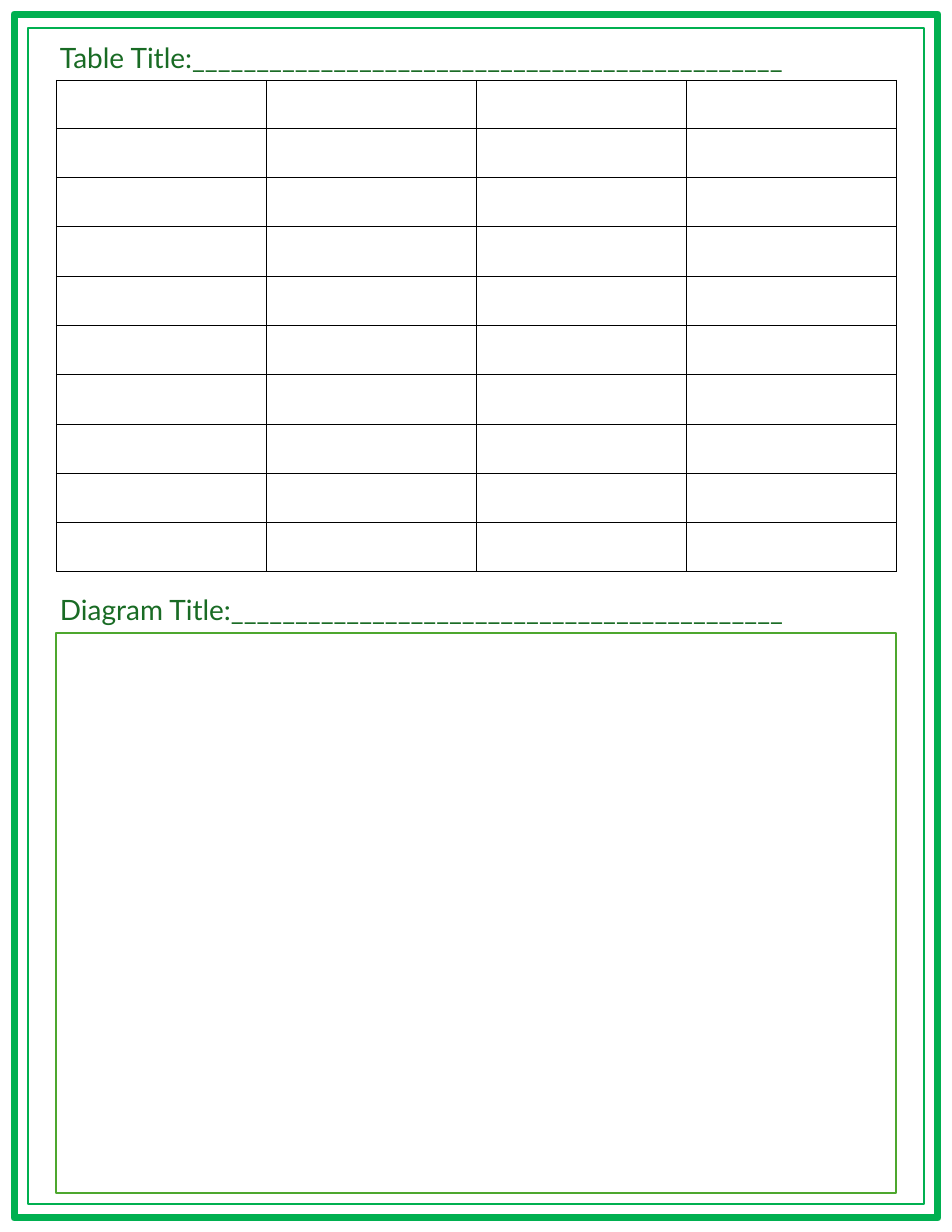
from lxml import etree
from pptx import Presentation
from pptx import util as u
from pptx.dml.color import RGBColor
from pptx.enum import shapes, text
from pptx.oxml.ns import qn

PX = u.Inches(1) / 112
COLORS = {
    "border": "00B050",
    "title": "196B24",
    "diagram": "4EA72E",
    "grid": "000000",
    "paper": "FFFFFF",
}


def px(length):
    return u.Emu(round(length * PX))


class Worksheet:
    font = "Lato"
    title_size = 18

    def __init__(self, slide):
        self.slide = slide

    def color(self, name):
        return RGBColor.from_string(COLORS[name])

    def frame(self, left, top, width, height, line, points, fill=None):
        shape = self.slide.shapes.add_shape(
            shapes.MSO_SHAPE.RECTANGLE, px(left), px(top), px(width), px(height))
        shape.shadow.inherit = False
        if fill:
            shape.fill.solid()
            shape.fill.fore_color.rgb = self.color(fill)
        else:
            shape.fill.background()
        shape.line.color.rgb = self.color(line)
        shape.line.width = u.Pt(points)

    def title(self, top, label, blanks):
        box = self.slide.shapes.add_textbox(px(49), px(top), px(854), px(45))
        box.text_frame.word_wrap = True
        box.text_frame.auto_size = text.MSO_AUTO_SIZE.SHAPE_TO_FIT_TEXT
        run = box.text_frame.paragraphs[0].add_run()
        run.text = label + "_" * blanks
        run.font.name = self.font
        run.font.size = u.Pt(self.title_size)
        run.font.color.rgb = self.color("title")

    def cell_borders(self, cell, points):
        properties = cell._tc.get_or_add_tcPr()
        for position, side in enumerate(("a:lnL", "a:lnR", "a:lnT", "a:lnB")):
            line = etree.Element(qn(side), w=str(u.Pt(points)))
            fill = etree.SubElement(line, qn("a:solidFill"))
            etree.SubElement(fill, qn("a:srgbClr"), val=COLORS["grid"])
            properties.insert(position, line)

    def table(self, left, top, width, header, body, body_rows, columns):
        table = self.slide.shapes.add_table(
            body_rows + 1, columns, px(left), px(top), px(width), px(header + body)).table
        table.first_row = False
        table.horz_banding = False
        for column in table.columns:
            column.width = px(width / columns)
        for index, row in enumerate(table.rows):
            row.height = px(body / body_rows if index else header)
        for cell in table.iter_cells():
            cell.fill.background()
            self.cell_borders(cell, 0.25)


def main():
    presentation = Presentation()
    presentation.slide_width = px(952)
    presentation.slide_height = px(1232)
    slide = presentation.slides.add_slide(presentation.slide_layouts[6])
    slide.background.fill.solid()
    slide.background.fill.fore_color.rgb = RGBColor.from_string(COLORS["paper"])
    sheet = Worksheet(slide)
    for margin, points in ((14, 4.5), (28, 1.5)):
        sheet.frame(margin, margin, 952 - 2 * margin, 1232 - 2 * margin, "border", points)
    sheet.table(56, 80, 840, header=48, body=444, body_rows=9, columns=4)
    sheet.frame(56, 633, 840, 560, "diagram", 1.5, fill="paper")
    sheet.title(35, "Table Title:", 46)
    sheet.title(587, "Diagram Title:", 43)
    presentation.save("out.pptx")


if __name__ == "__main__":
    main()
